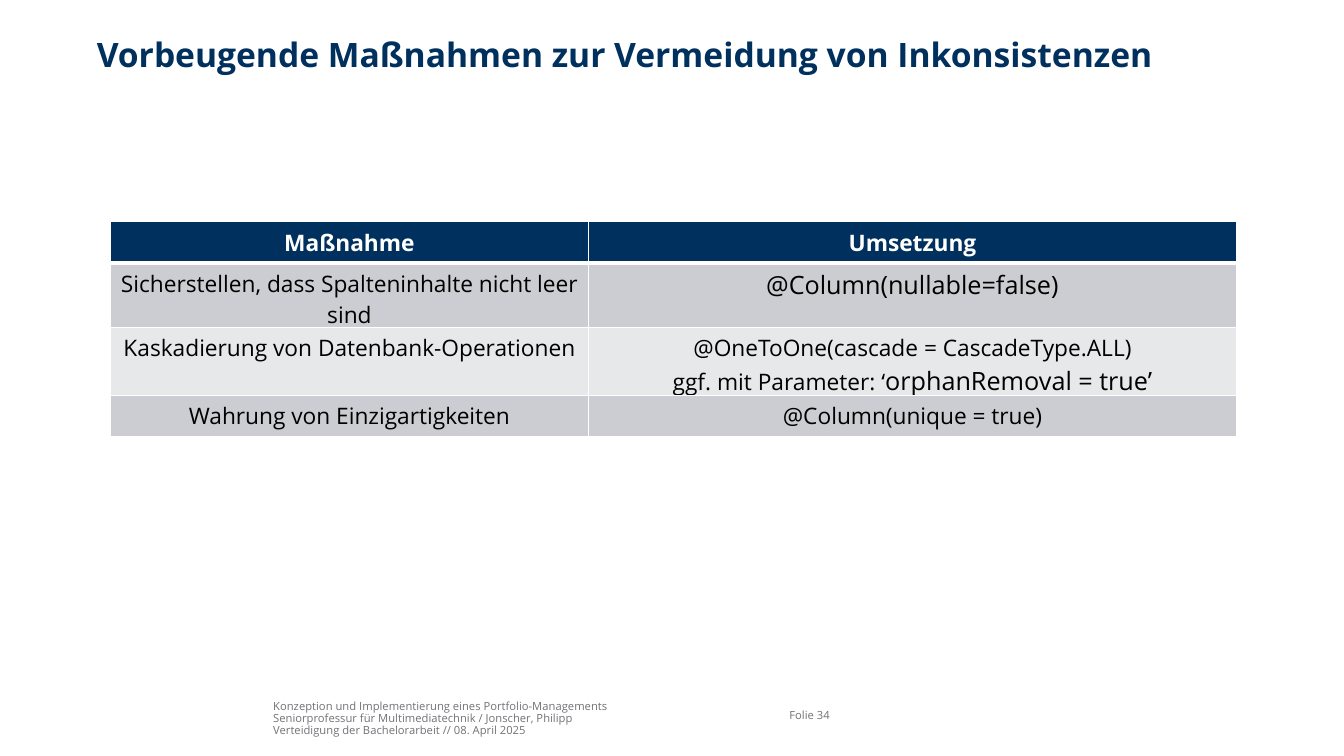
from dataclasses import dataclass

from lxml import etree
from pptx import Presentation
from pptx.dml.color import RGBColor
from pptx.enum.text import MSO_ANCHOR, PP_ALIGN
from pptx.oxml.ns import qn
from pptx.util import Inches, Pt

TOP, MIDDLE, BOTTOM = MSO_ANCHOR.TOP, MSO_ANCHOR.MIDDLE, MSO_ANCHOR.BOTTOM
LEFT, CENTER = PP_ALIGN.LEFT, PP_ALIGN.CENTER

FONT = "Open Sans"
NAVY = RGBColor(0x00, 0x30, 0x5D)
GREY = RGBColor(0x72, 0x72, 0x77)
DARK = RGBColor(0xCC, 0xCD, 0xD2)
LIGHT = RGBColor(0xE7, 0xE8, 0xEA)
WHITE = RGBColor(0xFF, 0xFF, 0xFF)
BLACK = RGBColor(0x00, 0x00, 0x00)


@dataclass
class Entry:
    text: str
    size: float = 16.2
    tail: str = ""  # closing words in larger type


@dataclass
class Note:
    left: float
    top: float
    width: float
    lines: list[str]
    anchor: MSO_ANCHOR


HEADS = [Entry("Maßnahme"), Entry("Umsetzung")]
ROWS = [
    HEADS,
    [Entry("Sicherstellen, dass Spalteninhalte nicht leer sind"),
     Entry("@Column(nullable=false)", 18)],
    [Entry("Kaskadierung von Datenbank-Operationen"),
     Entry("@OneToOne(cascade = CascadeType.ALL)\vggf. mit Parameter: ‘",
           tail="orphanRemoval = true’")],
    [Entry("Wahrung von Einzigartigkeiten"), Entry("@Column(unique = true)")],
]
COLS = [4.75, 6.42]
ROW_H = 0.41

NOTES = [
    Note(2.71, 6.91, 4.9,
         ["Konzeption und Implementierung eines Portfolio-Managements\v"
          "Seniorprofessur für Multimediatechnik / Jonscher, Philipp",
          "Verteidigung der Bachelorarbeit // 08. April 2025"], BOTTOM),
    Note(7.83, 6.9, 0.77, ["Folie 34"], MIDDLE),
]


def style(item, size: float, color: RGBColor, bold: bool = False) -> None:
    """Format the font of a paragraph or run."""
    font = item.font
    font.name, font.size, font.bold = FONT, Pt(size), bold
    font.color.rgb = color


def set_frame(frame, anchor: MSO_ANCHOR) -> None:
    frame.margin_left = frame.margin_right = 0
    frame.margin_top = frame.margin_bottom = 0
    frame.word_wrap = True
    frame.vertical_anchor = anchor


def add_note(slide, note: Note) -> None:
    box = slide.shapes.add_textbox(Inches(note.left), Inches(note.top),
                                   Inches(note.width), Inches(0.4))
    frame = box.text_frame
    set_frame(frame, note.anchor)
    for i, line in enumerate(note.lines):
        para = frame.paragraphs[0] if i == 0 else frame.add_paragraph()
        para.text = line
        para.line_spacing = 0.9
        style(para, 8, GREY)


def set_edges(cell, base: float) -> None:
    """Draw white cell borders, with the bottom one in its own width."""
    props = cell._tc.get_or_add_tcPr()
    widths = {"a:lnL": 1, "a:lnR": 1, "a:lnT": 1, "a:lnB": base}
    for spot, (tag, width) in enumerate(widths.items()):
        line = etree.Element(qn(tag), w=str(Pt(width)))
        fill = etree.SubElement(line, qn("a:solidFill"))
        etree.SubElement(fill, qn("a:srgbClr"), val=str(WHITE))
        props.insert(spot, line)


def fill_cell(cell, entry: Entry, row: int) -> None:
    head = row == 0
    color = WHITE if head else BLACK
    cell.fill.solid()
    cell.fill.fore_color.rgb = NAVY if head else DARK if row % 2 else LIGHT
    set_edges(cell, 3 if head else 1)
    para = cell.text_frame.paragraphs[0]
    para.text = entry.text
    para.alignment = CENTER
    style(para, entry.size, color, head)
    if entry.tail:
        run = para.add_run()
        run.text = entry.tail
        run.font.size = Pt(18)


def add_grid(slide) -> None:
    shape = slide.shapes.add_table(len(ROWS), len(COLS), Inches(1.09), Inches(2.2),
                                   Inches(sum(COLS)), Inches(ROW_H * len(ROWS)))
    table = shape.table
    table.horz_banding = False
    for col, width in zip(table.columns, COLS):
        col.width = Inches(width)
    for r, entries in enumerate(ROWS):
        table.rows[r].height = Inches(ROW_H)
        for c, entry in enumerate(entries):
            fill_cell(table.cell(r, c), entry, r)
    shape.height = Inches(2.21)


def add_title(slide) -> None:
    title = slide.shapes.title
    title.left, title.top = Inches(0.96), Inches(0.38)
    title.width, title.height = Inches(11.57), Inches(0.75)
    set_frame(title.text_frame, TOP)
    para = title.text_frame.paragraphs[0]
    para.text = "Vorbeugende Maßnahmen zur Vermeidung von Inkonsistenzen"
    para.alignment = LEFT
    para.line_spacing = 0.9
    style(para, 24, NAVY, True)


def main() -> None:
    deck = Presentation()
    deck.slide_width, deck.slide_height = Inches(13.33), Inches(7.5)
    slide = deck.slides.add_slide(deck.slide_layouts[5])

    # Footer
    for note in NOTES:
        add_note(slide, note)

    # Title and table of measures
    add_title(slide)
    add_grid(slide)
    deck.save("out.pptx")


if __name__ == "__main__":
    main()
